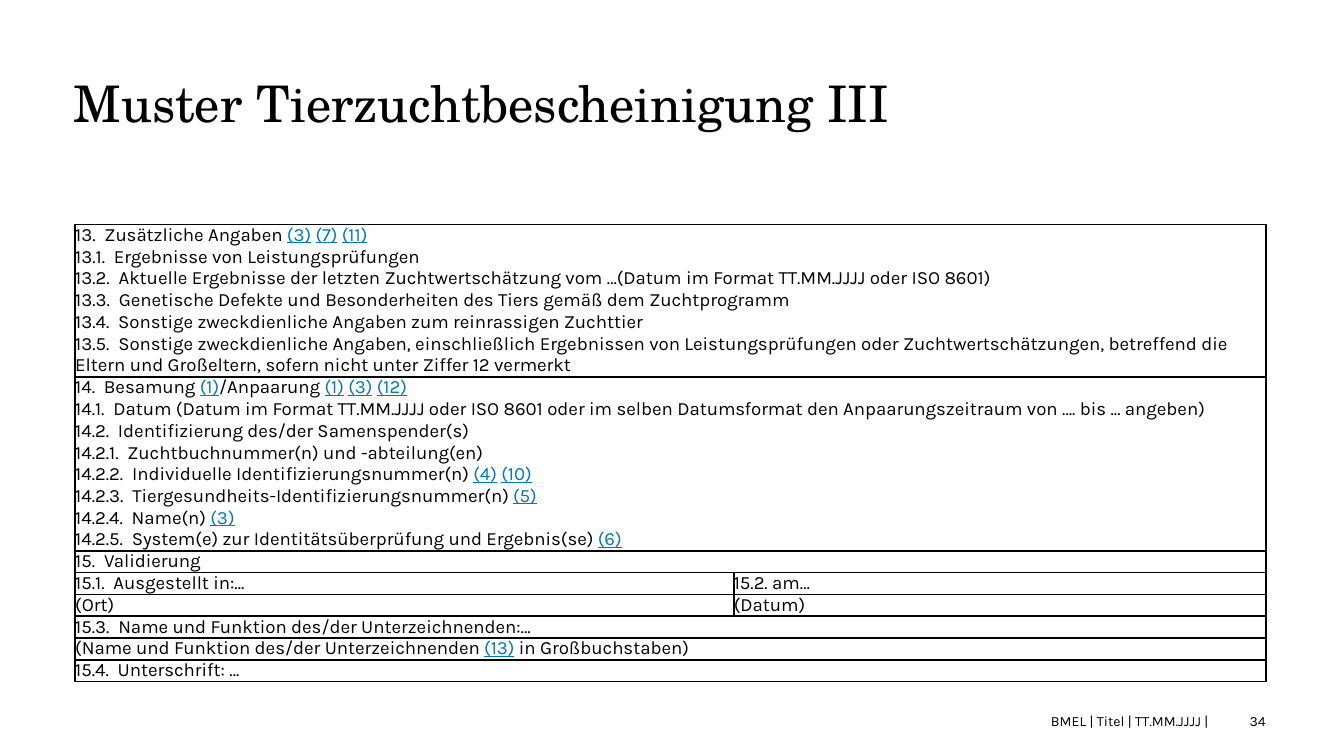
from lxml import etree
from pptx import Presentation
from pptx.dml.color import RGBColor
from pptx.enum import text as t
from pptx.oxml import ns
from pptx.util import Inches, Pt

HUES = {"ink": "000000", "link": "0077B6"}
SANS, SERIF = "Karla", "TeX Gyre Schola"
LINE = 0.16  # height of one line of table text, in inches

# One entry per table row, one list of paragraphs per cell; |...| marks a reference.
ROWS = [
    [["13.  Zusätzliche Angaben |(3)| |(7)| |(11)| ",
      "13.1.  Ergebnisse von Leistungsprüfungen",
      "13.2.  Aktuelle Ergebnisse der letzten Zuchtwertschätzung vom …"
      "(Datum im Format TT.MM.JJJJ oder ISO 8601)",
      "13.3.  Genetische Defekte und Besonderheiten des Tiers gemäß dem Zuchtprogramm",
      "13.4.  Sonstige zweckdienliche Angaben zum reinrassigen Zuchttier",
      "13.5.  Sonstige zweckdienliche Angaben, einschließlich Ergebnissen von "
      "Leistungsprüfungen oder Zuchtwertschätzungen, betreffend die Eltern und "
      "Großeltern, sofern nicht unter Ziffer 12 vermerkt"]],
    [["14.  Besamung |(1)|/Anpaarung |(1)| |(3)| |(12)| ",
      "14.1.  Datum (Datum im Format TT.MM.JJJJ oder ISO 8601 oder im selben "
      "Datumsformat den Anpaarungszeitraum von …. bis ... angeben)",
      "14.2.  Identifizierung des/der Samenspender(s)",
      "14.2.1.  Zuchtbuchnummer(n) und -abteilung(en)",
      "14.2.2.  Individuelle Identifizierungsnummer(n) |(4)| |(10)| ",
      "14.2.3.  Tiergesundheits-Identifizierungsnummer(n) |(5)| ",
      "14.2.4.  Name(n) |(3)| ",
      "14.2.5.  System(e) zur Identitätsüberprüfung und Ergebnis(se) |(6)| "]],
    [["15.  Validierung"]],
    [["15.1.  Ausgestellt in:…"], ["15.2. am…"]],
    [["(Ort)"], ["(Datum)"]],
    [["15.3.  Name und Funktion des/der Unterzeichnenden:…"]],
    [["(Name und Funktion des/der Unterzeichnenden |(13)| in Großbuchstaben)"]],
    [["15.4.  Unterschrift: …"]],
]


def style(run, size, face=SANS, hue="ink"):
    run.font.size = Pt(size)
    run.font.name = face
    run.font.color.rgb = RGBColor.from_string(HUES[hue])


def place(shape, box):
    shape.left, shape.top, shape.width, shape.height = map(Inches, box)


def clear_pad(item):
    item.margin_left = item.margin_right = 0
    item.margin_top = item.margin_bottom = 0


def add_title(slide, box):
    title = slide.shapes.title
    place(title, box)
    frame = title.text_frame
    frame.text = "Muster Tierzuchtbescheinigung III"
    frame.auto_size = t.MSO_AUTO_SIZE.NONE
    frame.vertical_anchor = t.MSO_ANCHOR.TOP
    clear_pad(frame)
    para = frame.paragraphs[0]
    para.alignment = t.PP_ALIGN.LEFT
    para.line_spacing = Pt(33)
    style(para.runs[0], 27, SERIF)


def add_note(slide, box, words, align):
    frame = slide.shapes.add_textbox(*map(Inches, box)).text_frame
    frame.text = words
    frame.word_wrap = True
    frame.vertical_anchor = t.MSO_ANCHOR.MIDDLE
    para = frame.paragraphs[0]
    para.alignment = align
    style(para.runs[0], 7.5)


def add_foot(slide, box):
    left, top, width, height = box
    add_note(slide, (left, top, 6.06, height), "BMEL | Titel | TT.MM.JJJJ |",
             t.PP_ALIGN.RIGHT)
    add_note(slide, (left + width - 0.47, top, 0.47, height), "34", t.PP_ALIGN.LEFT)


def frame_cell(cell):
    """Draw a black 1 pt border on all four sides, with no fill."""
    cell.fill.background()
    props = cell._tc.get_or_add_tcPr()
    for spot, side in enumerate(("lnL", "lnR", "lnT", "lnB")):
        line = etree.Element(ns.qn(f"a:{side}"), w=str(Pt(1)))
        fill = etree.SubElement(line, ns.qn("a:solidFill"))
        etree.SubElement(fill, ns.qn("a:srgbClr"), val=HUES["ink"])
        props.insert(spot, line)


def fill_cell(cell, lines):
    frame = cell.text_frame
    frame.text = "\n".join([""] * len(lines))
    for para, line in zip(frame.paragraphs, lines):
        for spot, part in enumerate(line.split("|")):
            run = para.add_run()
            run.text = part
            ref = spot % 2 == 1
            style(run, 10, hue="link" if ref else "ink")
            if ref:
                run.font.underline = True


def add_form(slide, box):
    form = slide.shapes.add_table(len(ROWS), 2, *map(Inches, box))
    table = form.table
    table.first_row = table.horz_banding = False
    for col, width in zip(table.columns, (4.9, box[2] - 4.9)):
        col.width = Inches(width)
    for cell in table.iter_cells():
        clear_pad(cell)
        frame_cell(cell)
    for r, cells in enumerate(ROWS):
        table.rows[r].height = Inches(LINE * len(cells[0]))
        if len(cells) == 1:
            table.cell(r, 0).merge(table.cell(r, 1))
        for c, lines in enumerate(cells):
            fill_cell(table.cell(r, c), lines)
    place(form, box)


def main():
    deck = Presentation()
    deck.slide_width = Inches(10)
    deck.slide_height = deck.slide_width * 9 // 16
    slide = deck.slides.add_slide(deck.slide_layouts[5])
    add_title(slide, (0.55, 0.53, 8.9, 0.87))
    add_form(slide, (0.56, 1.67, 8.86, 3.5))
    add_foot(slide, (3.03, 5.3, 6.64, 0.13))
    deck.save("out.pptx")


if __name__ == "__main__":
    main()
